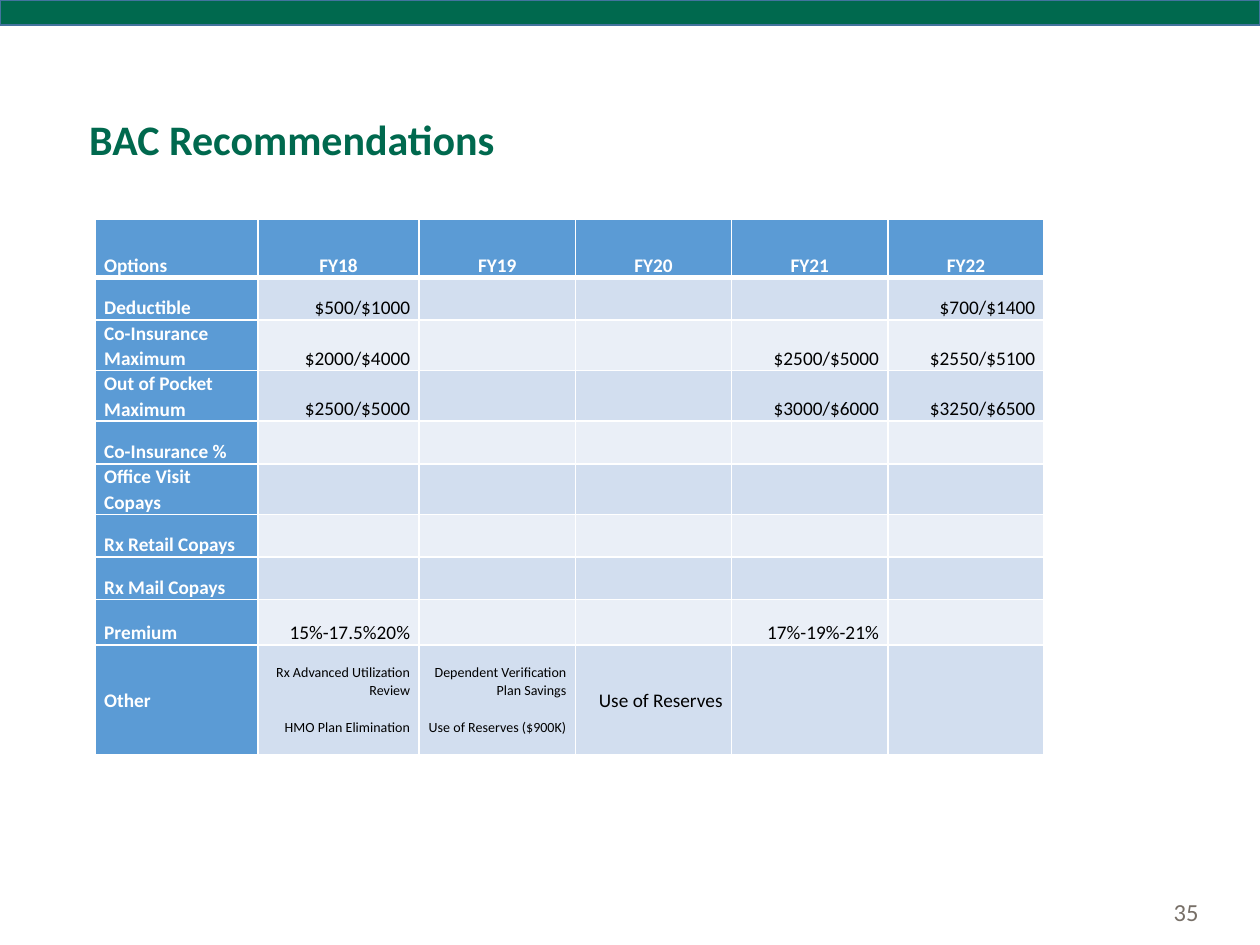
import lxml.etree
import pptx
import pptx.dml.color
import pptx.enum.shapes
import pptx.enum.text
import pptx.oxml.ns
import pptx.util

Cm = pptx.util.Cm
Pt = pptx.util.Pt
Align = pptx.enum.text.PP_ALIGN
Anchor = pptx.enum.text.MSO_ANCHOR

TITLE = "BAC Recommendations"
PAGE_NUMBER = "35"
YEARS = ["FY18", "FY19", "FY20", "FY21", "FY22"]
OPTIONS = [
    ("Deductible", 0.86, {"FY18": "$500/$1000", "FY22": "$700/$1400"}),
    ("Co-Insurance Maximum", 1.02,
     {"FY18": "$2000/$4000", "FY21": "$2500/$5000", "FY22": "$2550/$5100"}),
    ("Out of Pocket Maximum", 1.02,
     {"FY18": "$2500/$5000", "FY21": "$3000/$6000", "FY22": "$3250/$6500"}),
    ("Co-Insurance %", 0.86, {}),
    ("Office Visit Copays", 1.02, {}),
    ("Rx Retail Copays", 0.86, {}),
    ("Rx Mail Copays", 0.86, {}),
    ("Premium", 0.91, {"FY18": "15%-17.5%20%", "FY21": "17%-19%-21%"}),
    ("Other", 2.21, {
        "FY18": "Rx Advanced Utilization Review\nHMO Plan Elimination",
        "FY19": "Dependent Verification Plan Savings\nUse of Reserves ($900K)",
        "FY20": "Use of Reserves",
    }),
]
HEADER_HEIGHT = 1.17
COLUMN_WIDTHS = [3.28, 3.25, 3.15, 3.15, 3.15, 3.15]

THEME = {
    "font": "Calibri",
    "green": "00694E", "banner_line": "43739E", "page": "776F67",
    "header": "5B9BD5", "bands": ("D2DEEF", "EAEFF7"),
    "light": "FFFFFF", "dark": "000000",
    "title_size": 24, "page_size": 14, "cell_size": 11, "note_size": 8,
}


def rgb(name):
    return pptx.dml.color.RGBColor.from_string(THEME.get(name, name))


def write(frame, text, size, color, bold=False, align=Align.LEFT, spacing=1.0, gap=0):
    frame.text = text
    for index, paragraph in enumerate(frame.paragraphs):
        paragraph.alignment = align
        paragraph.line_spacing = spacing
        if index:
            paragraph.space_before = Pt(gap)
        for run in paragraph.runs:
            run.font.name = THEME["font"]
            run.font.size = Pt(THEME[size])
            run.font.bold = bold
            run.font.color.rgb = rgb(color)


def add_text(slide, box, text, size, color, **style):
    frame = slide.shapes.add_textbox(*map(Cm, box)).text_frame
    frame.word_wrap = True
    frame.vertical_anchor = Anchor.MIDDLE
    write(frame, text, size, color, **style)


def set_borders(cell, widths):
    properties = cell._tc.get_or_add_tcPr()
    qn = pptx.oxml.ns.qn
    for index, (side, width) in enumerate(widths.items()):
        line = lxml.etree.Element(qn(f"a:ln{side}"), w=str(Pt(width)))
        fill = lxml.etree.SubElement(line, qn("a:solidFill"))
        lxml.etree.SubElement(fill, qn("a:srgbClr"), val=THEME["light"])
        properties.insert(index, line)


def add_options_table(slide):
    rows = [["Options", *YEARS]]
    rows += [[name, *(values.get(year, "") for year in YEARS)] for name, _, values in OPTIONS]
    heights = [HEADER_HEIGHT] + [height for _, height, _ in OPTIONS]
    table = slide.shapes.add_table(
        len(rows), len(COLUMN_WIDTHS), Cm(1.92), Cm(4.42),
        Cm(sum(COLUMN_WIDTHS)), Cm(sum(heights))).table
    for column, width in zip(table.columns, COLUMN_WIDTHS):
        column.width = Cm(width)
    for row, height in zip(table.rows, heights):
        row.height = Cm(height)

    for row_index, row in enumerate(rows):
        for column_index, text in enumerate(row):
            cell = table.cell(row_index, column_index)
            heading = row_index == 0 or column_index == 0
            note = "\n" in text
            cell.margin_left = cell.margin_right = Cm(0.18)
            cell.margin_top = cell.margin_bottom = 0
            cell.vertical_anchor = Anchor.MIDDLE if row[0] == "Other" else Anchor.BOTTOM
            cell.fill.solid()
            cell.fill.fore_color.rgb = rgb(
                "header" if heading else THEME["bands"][(row_index - 1) % 2])
            set_borders(cell, {"L": 1, "R": 1, "T": 3 if row_index == 1 else 1,
                               "B": 3 if row_index == 0 else 1})
            if column_index == 0:
                align = Align.LEFT
            else:
                align = Align.CENTER if row_index == 0 else Align.RIGHT
            write(cell.text_frame, text, "note_size" if note else "cell_size",
                  "light" if heading else "dark", bold=heading, align=align,
                  spacing=1.07, gap=10.5)


def main():
    presentation = pptx.Presentation()
    presentation.slide_width, presentation.slide_height = Cm(25.4), Cm(19.05)
    slide = presentation.slides.add_slide(presentation.slide_layouts[6])

    add_text(slide, (16.79, 17.86, 7.62, 1.02), PAGE_NUMBER, "page_size", "page",
             align=Align.RIGHT)

    banner = slide.shapes.add_shape(
        pptx.enum.shapes.MSO_SHAPE.RECTANGLE, 0, 0, presentation.slide_width, Cm(0.51))
    banner.shadow.inherit = False
    banner.fill.solid()
    banner.fill.fore_color.rgb = rgb("green")
    banner.line.color.rgb = rgb("banner_line")
    banner.line.width = Pt(1)

    add_options_table(slide)
    add_text(slide, (1.55, 1.02, 21.89, 3.68), TITLE, "title_size", "green",
             bold=True, spacing=0.9)
    presentation.save("out.pptx")


if __name__ == "__main__":
    main()
